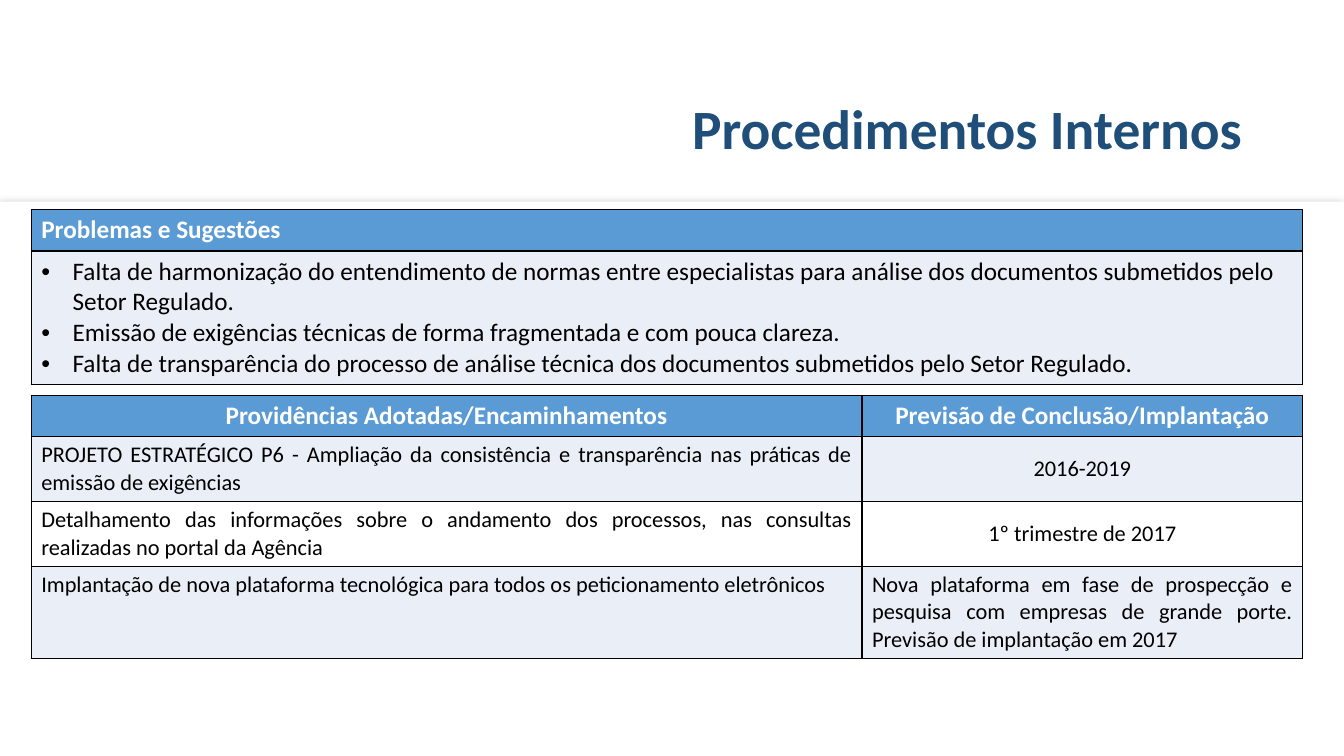
from lxml import etree
from pptx import Presentation
from pptx.dml.color import RGBColor
from pptx.enum.shapes import MSO_SHAPE
from pptx.enum.text import MSO_ANCHOR, MSO_AUTO_SIZE, PP_ALIGN
from pptx.oxml.ns import qn
from pptx.util import Inches, Pt

LEFT, CENTER, RIGHT, JUSTIFY = PP_ALIGN.LEFT, PP_ALIGN.CENTER, PP_ALIGN.RIGHT, PP_ALIGN.JUSTIFY
TOP, MIDDLE = MSO_ANCHOR.TOP, MSO_ANCHOR.MIDDLE
FONT = "Calibri"
WHITE, BLACK, NAVY, BLUE, PALE = "FFFFFF", "000000", "1F4E79", "5B9BD5", "EAEFF7"

TITLE = "Procedimentos Internos"
PROBLEMS_HEADER = "Problemas e Sugestões"
PROBLEMS = [
    "Falta de harmonização do entendimento de normas entre especialistas para análise "
    "dos documentos submetidos pelo Setor Regulado.",
    "Emissão de exigências técnicas de forma fragmentada e com pouca clareza.",
    "Falta de transparência do processo de análise técnica dos documentos submetidos "
    "pelo Setor Regulado.",
]
ACTIONS_HEADER = ["Providências Adotadas/Encaminhamentos", "Previsão de Conclusão/Implantação"]
# Action, forecast, forecast alignment, forecast anchor
ACTIONS = [
    ("PROJETO ESTRATÉGICO P6 - Ampliação da consistência e transparência nas práticas "
     "de emissão de exigências", "2016-2019", CENTER, MIDDLE),
    ("Detalhamento das informações sobre o andamento dos processos, nas consultas "
     "realizadas no portal da Agência", "1º trimestre de 2017", CENTER, MIDDLE),
    ("Implantação de nova plataforma tecnológica para todos os peticionamento eletrônicos",
     "Nova plataforma em fase de prospecção e pesquisa com empresas de grande porte. "
     "Previsão de implantação em 2017", JUSTIFY, TOP),
]

TABLE_LEFT = 0.31
PROBLEMS_TOP, PROBLEMS_WIDTHS, PROBLEMS_HEIGHTS = 2.08, [12.61], [0.41, 1.3]
ACTIONS_TOP, ACTIONS_WIDTHS, ACTIONS_HEIGHTS = 3.92, [8.24, 4.37], [0.41, 0.63, 0.63, 0.9]


def rgb(color):
    return RGBColor.from_string(color)


def add_run(paragraph, text, size, color, bold=False):
    run = paragraph.add_run()
    run.text = text
    run.font.name, run.font.size, run.font.bold = FONT, Pt(size), bold
    run.font.color.rgb = rgb(color)


def add_color(parent, color):
    return etree.SubElement(parent, qn("a:srgbClr"), val=color)


def add_shadow(shape, color, opacity, blur):
    effects = etree.SubElement(shape.element.spPr, qn("a:effectLst"))
    shadow = etree.SubElement(effects, qn("a:outerShdw"), blurRad=str(Pt(blur)), dist="0", dir="0")
    etree.SubElement(add_color(shadow, color), qn("a:alpha"), val=str(opacity * 1000))


def add_bullet(paragraph):
    properties = paragraph._p.get_or_add_pPr()
    properties.set("marL", str(Inches(0.31)))
    properties.set("indent", str(-Inches(0.31)))
    etree.SubElement(properties, qn("a:buFont"), typeface="Arial")
    etree.SubElement(properties, qn("a:buChar"), char="•")


def style_cell(cell, fill, anchor=TOP):
    """Give the cell thin black borders, a fill and a vertical anchor."""
    cell.vertical_anchor = anchor
    properties = cell._tc.get_or_add_tcPr()
    for side in ("a:lnL", "a:lnR", "a:lnT", "a:lnB"):
        line = etree.SubElement(properties, qn(side), w=str(Pt(1)))
        add_color(etree.SubElement(line, qn("a:solidFill")), BLACK)
    cell.fill.solid()
    cell.fill.fore_color.rgb = rgb(fill)


def fill_cell(cell, text, size, color, fill, alignment, anchor=TOP, bold=False):
    style_cell(cell, fill, anchor)
    paragraph = cell.text_frame.paragraphs[0]
    paragraph.alignment = alignment
    add_run(paragraph, text, size, color, bold)


def add_table(slide, top, widths, heights):
    table = slide.shapes.add_table(
        len(heights), len(widths), Inches(TABLE_LEFT), Inches(top),
        Inches(sum(widths)), Inches(sum(heights))).table
    for column, width in zip(table.columns, widths):
        column.width = Inches(width)
    for row, height in zip(table.rows, heights):
        row.height = Inches(height)
    return table


def add_header(table, labels, alignment):
    for cell, label in zip(table.rows[0].cells, labels):
        fill_cell(cell, label, 18, WHITE, BLUE, alignment, bold=True)


def add_panel(slide):
    panel = slide.shapes.add_shape(
        MSO_SHAPE.RECTANGLE, 0, Inches(2), Inches(13.33), Inches(5.5))
    panel.fill.solid()
    panel.fill.fore_color.rgb = rgb(WHITE)
    panel.line.fill.background()
    add_shadow(panel, "A6A6A6", 42, 5)
    return panel


def add_title(slide):
    title = slide.shapes.title
    title.left, title.top, title.width, title.height = map(Inches, (0.92, 0.64, 11.5, 1.32))
    frame = title.text_frame
    frame.auto_size, frame.vertical_anchor = MSO_AUTO_SIZE.NONE, MIDDLE
    paragraph = frame.paragraphs[0]
    paragraph.alignment, paragraph.line_spacing = RIGHT, 0.9
    add_run(paragraph, TITLE, 39.6, NAVY, bold=True)
    return title


def add_problems(slide):
    table = add_table(slide, PROBLEMS_TOP, PROBLEMS_WIDTHS, PROBLEMS_HEIGHTS)
    add_header(table, [PROBLEMS_HEADER], LEFT)
    cell = table.cell(1, 0)
    style_cell(cell, PALE)
    frame = cell.text_frame
    for index, problem in enumerate(PROBLEMS):
        paragraph = frame.add_paragraph() if index else frame.paragraphs[0]
        add_bullet(paragraph)
        add_run(paragraph, problem, 18, BLACK)


def add_actions(slide):
    table = add_table(slide, ACTIONS_TOP, ACTIONS_WIDTHS, ACTIONS_HEIGHTS)
    add_header(table, ACTIONS_HEADER, CENTER)
    for row, (action, forecast, alignment, anchor) in enumerate(ACTIONS, start=1):
        fill = PALE if row % 2 else WHITE
        fill_cell(table.cell(row, 0), action, 16, BLACK, fill, JUSTIFY)
        fill_cell(table.cell(row, 1), forecast, 16, BLACK, fill, alignment, anchor)


def main():
    presentation = Presentation()
    presentation.slide_width, presentation.slide_height = Inches(13.33), Inches(7.5)
    slide = presentation.slides.add_slide(presentation.slide_layouts[5])
    panel = add_panel(slide)
    title = add_title(slide)
    panel.element.addnext(title.element)  # the panel lies behind the title
    add_problems(slide)
    add_actions(slide)
    presentation.save("out.pptx")


if __name__ == "__main__":
    main()
